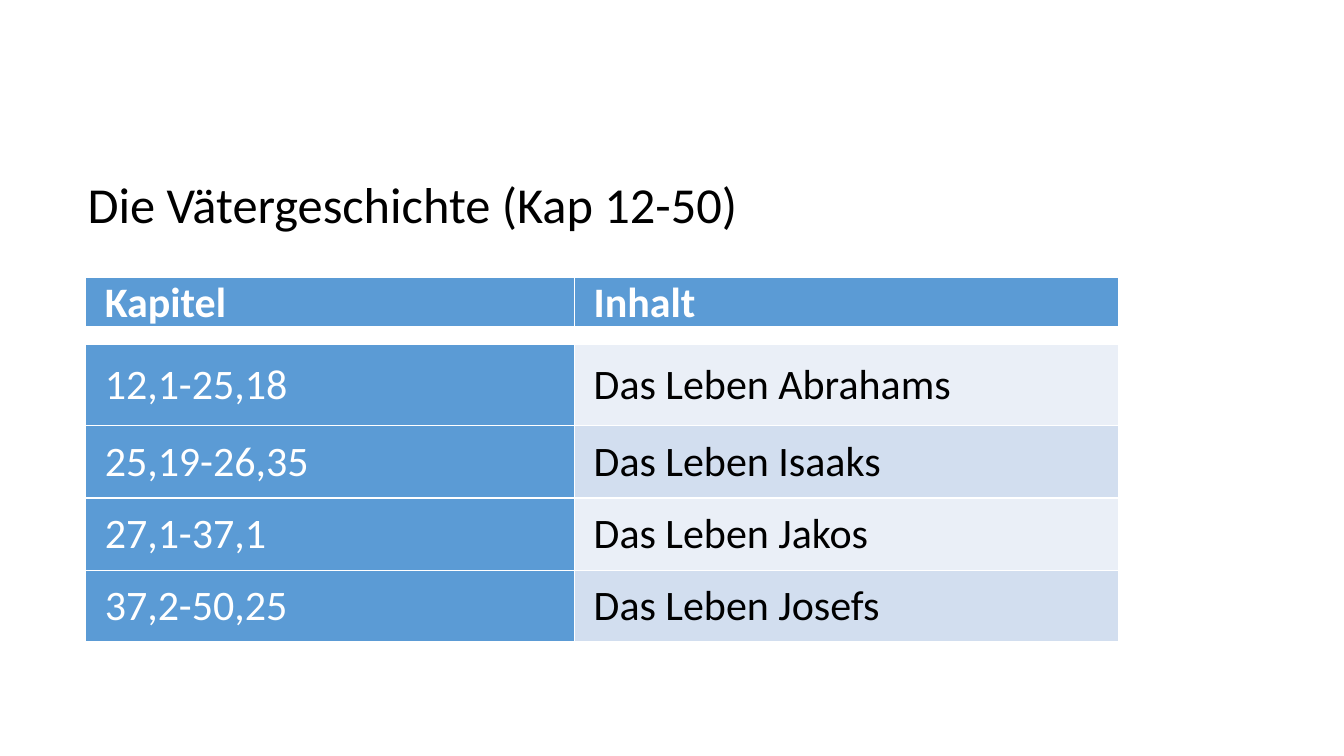
"""Build a slide with a table of the patriarch narratives in Genesis."""
from lxml import etree
from pptx import Presentation
from pptx.dml.color import RGBColor
from pptx.enum.text import MSO_ANCHOR, MSO_AUTO_SIZE, PP_ALIGN
from pptx.oxml.ns import qn
from pptx.util import Pt

LEFT = PP_ALIGN.LEFT
TOP, MIDDLE = MSO_ANCHOR.TOP, MSO_ANCHOR.MIDDLE
FIT_SHAPE = MSO_AUTO_SIZE.SHAPE_TO_FIT_TEXT
FONT = "Calibri"
WHITE, BLACK, BLUE = "FFFFFF", "000000", "5B9BD5"
BANDS = ["EAEFF7", "D2DEEF"]
COLUMN_WIDTHS = [349.2, 388.8]
ROW_HEIGHTS = [36, 12.24, 57.6, 51.84, 51.84, 51.12]
ROWS = [
    ("Kapitel", "Inhalt"),
    ("", ""),
    ("12,1-25,18", "Das Leben Abrahams"),
    ("25,19-26,35", "Das Leben Isaaks"),
    ("27,1-37,1", "Das Leben Jakos"),
    ("37,2-50,25", "Das Leben Josefs"),
]
HEADER, GAP = 0, 1


def format_run(run, size, color, bold=False):
    run.font.name = FONT
    run.font.size = Pt(size)
    run.font.bold = bold
    run.font.color.rgb = RGBColor.from_string(color)


def add_border(cell, side, width):
    line = etree.SubElement(cell._tc.get_or_add_tcPr(), qn(f"a:ln{side}"), w=str(Pt(width)))
    fill = etree.SubElement(line, qn("a:solidFill"))
    etree.SubElement(fill, qn("a:srgbClr"), val=WHITE)


prs = Presentation()
prs.slide_width, prs.slide_height = Pt(960), Pt(540)
slide = prs.slides.add_slide(prs.slide_layouts[5])

title = slide.shapes.title
title.left, title.top, title.width, title.height = Pt(55.44), Pt(120.24), Pt(483.12), Pt(51.12)
heading = title.text_frame
heading.text = "Die Vätergeschichte (Kap 12-50)"
heading.word_wrap = False
heading.auto_size = FIT_SHAPE
heading.vertical_anchor = TOP
heading.paragraphs[0].alignment = LEFT
format_run(heading.paragraphs[0].runs[0], 36, BLACK)

chapters = slide.shapes.add_table(
    len(ROWS), len(COLUMN_WIDTHS), Pt(61.2), Pt(198), Pt(sum(COLUMN_WIDTHS)), Pt(sum(ROW_HEIGHTS))
).table
for column, width in zip(chapters.columns, COLUMN_WIDTHS):
    column.width = Pt(width)

for r, (row, height) in enumerate(zip(chapters.rows, ROW_HEIGHTS)):
    row.height = Pt(height)
    for c, cell in enumerate(row.cells):
        cell.margin_left = cell.margin_right = Pt(13.68)
        cell.margin_top = cell.margin_bottom = Pt(0)
        cell.vertical_anchor = MIDDLE if r > GAP else TOP
        for side in "LRTB":
            thick = (r, side) in [(HEADER, "B"), (GAP, "T")]
            add_border(cell, side, 3 if thick else 1)

        if r == GAP:
            color = WHITE
        elif r == HEADER or c == 0:
            color = BLUE
        else:
            color = BANDS[r % 2]
        cell.fill.solid()
        cell.fill.fore_color.rgb = RGBColor.from_string(color)

        paragraph = cell.text_frame.paragraphs[0]
        if r == GAP:
            etree.SubElement(paragraph._p, qn("a:endParaRPr"), sz="800")
        else:
            paragraph.text = ROWS[r][c]
            format_run(paragraph.runs[0], 30, WHITE if color == BLUE else BLACK, r == HEADER)

prs.save("out.pptx")
